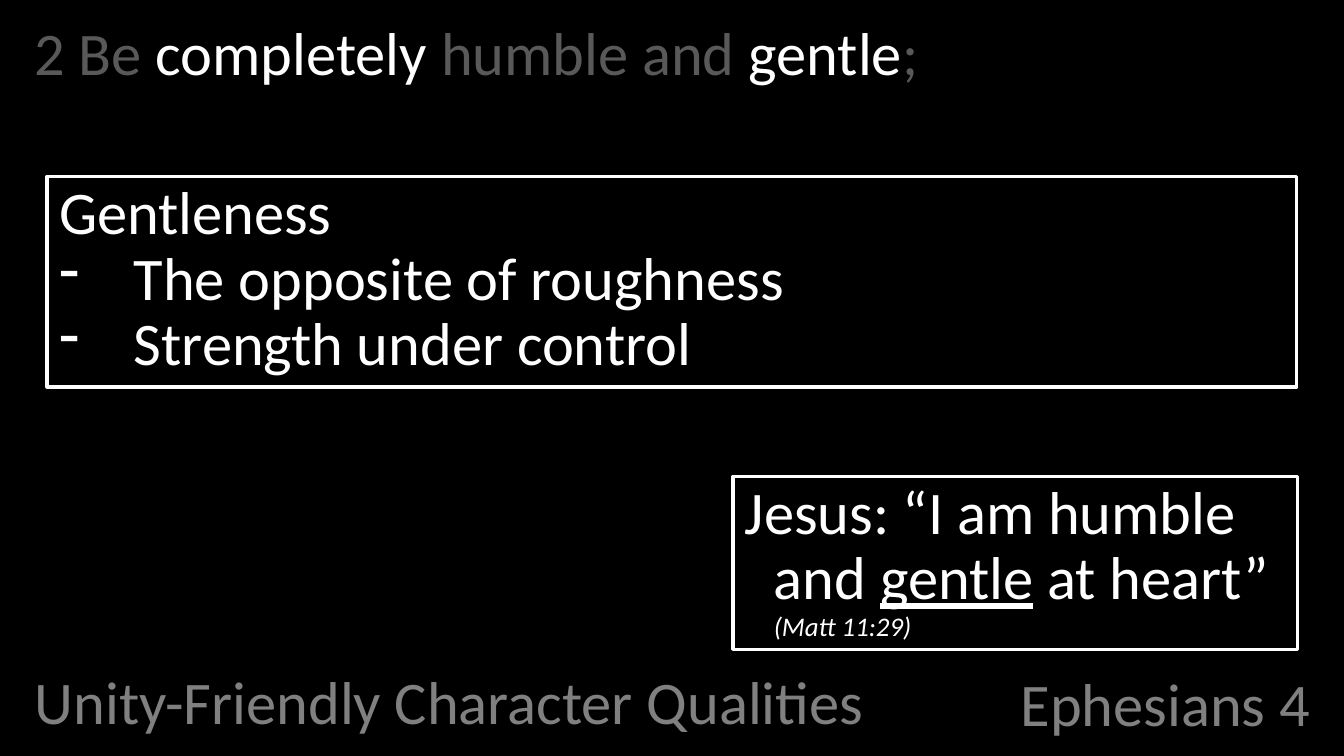
from dataclasses import dataclass

from lxml.etree import SubElement
from pptx import Presentation
from pptx.dml.color import RGBColor
from pptx.enum.shapes import MSO_SHAPE
from pptx.enum.text import MSO_ANCHOR, MSO_AUTO_SIZE, PP_ALIGN
from pptx.oxml.ns import qn
from pptx.util import Cm, Pt

COLORS = {"black": "000000", "white": "FFFFFF", "dim": "595959", "footer": "808080"}


@dataclass
class Span:
    text: str
    color: str = "white"
    size: int = 36
    underline: bool = False
    italic: bool = False


@dataclass
class Para:
    spans: list[Span]
    indent: float = 0
    spacing: float = 0.9
    bullet: str = ""
    align: PP_ALIGN = PP_ALIGN.LEFT


@dataclass
class Block:
    left: float
    top: float
    width: float
    height: float
    paras: list[Para]
    anchor: MSO_ANCHOR = MSO_ANCHOR.TOP


TITLE = Block(17.93, 14.12, 9.83, 1.52, [
    Para([Span("Ephesians 4", "footer")], spacing=0.8, align=PP_ALIGN.RIGHT),
], MSO_ANCHOR.BOTTOM)

PLAIN_BLOCKS = [
    Block(0.48, 0.3, 27.28, 13.44, [
        Para([
            Span("2 Be ", "dim"),
            Span("completely "),
            Span("humble and ", "dim"),
            Span("gentle"),
            Span(";", "dim"),
        ], 0.97, 0.95),
    ]),
    Block(0.48, 14.12, 20.62, 1.52, [
        Para([Span("Unity-Friendly Character Qualities", "footer")], 0.97, 0.95),
    ], MSO_ANCHOR.BOTTOM),
]

FRAMED_BLOCKS = [
    Block(0.99, 3.71, 26.24, 4.42, [
        Para([Span("Gentleness")], 0.48),
        Para([Span("The opposite of roughness")], 1.57, bullet="-"),
        Para([Span("Strength under control")], 1.57, bullet="-"),
    ]),
    Block(15.39, 10.01, 11.86, 3.63, [
        Para([
            Span("Jesus: “I am humble and "),
            Span("gentle", underline=True),
            Span(" at heart” "),
            Span("(Matt 11:29)", size=16, italic=True),
        ], 0.61),
    ]),
]


def rgb(name: str) -> RGBColor:
    return RGBColor.from_string(COLORS[name])


def bounds(block: Block) -> tuple:
    return Cm(block.left), Cm(block.top), Cm(block.width), Cm(block.height)


def write_text(shape, block: Block, auto_size=MSO_AUTO_SIZE.NONE) -> None:
    frame = shape.text_frame
    frame.word_wrap = True
    frame.auto_size = auto_size
    frame.vertical_anchor = block.anchor
    for index, para in enumerate(block.paras):
        paragraph = frame.add_paragraph() if index else frame.paragraphs[0]
        paragraph.alignment = para.align
        paragraph.line_spacing = para.spacing
        paragraph.space_before = Pt(0)
        properties = paragraph._p.get_or_add_pPr()
        properties.set("marL", str(Cm(para.indent)))
        properties.set("indent", str(-Cm(para.indent)))
        if para.bullet:
            SubElement(properties, qn("a:buChar"), char=para.bullet)
        for span in para.spans:
            run = paragraph.add_run()
            run.text = span.text
            run.font.name = "Calibri"
            run.font.size = Pt(span.size)
            run.font.color.rgb = rgb(span.color)
            run.font.underline = span.underline
            run.font.italic = span.italic


def add_framed(page, block: Block) -> None:
    box = page.shapes.add_shape(MSO_SHAPE.ROUNDED_RECTANGLE, *bounds(block))
    box.adjustments[0] = 0
    box.shadow.inherit = False
    box.fill.solid()
    box.fill.fore_color.rgb = rgb("black")
    box.line.color.rgb = rgb("white")
    box.line.width = Pt(2)
    write_text(box, block, MSO_AUTO_SIZE.SHAPE_TO_FIT_TEXT)


def main() -> None:
    deck = Presentation()
    deck.slide_width, deck.slide_height = Cm(28.22), Cm(15.88)
    page = deck.slides.add_slide(deck.slide_layouts.get_by_name("Title Only"))
    page.background.fill.solid()
    page.background.fill.fore_color.rgb = rgb("black")

    title = page.shapes.title
    title.left, title.top, title.width, title.height = bounds(TITLE)
    write_text(title, TITLE)
    for block in PLAIN_BLOCKS:
        write_text(page.shapes.add_textbox(*bounds(block)), block)
    for block in FRAMED_BLOCKS:
        add_framed(page, block)
    deck.save("out.pptx")


if __name__ == "__main__":
    main()
